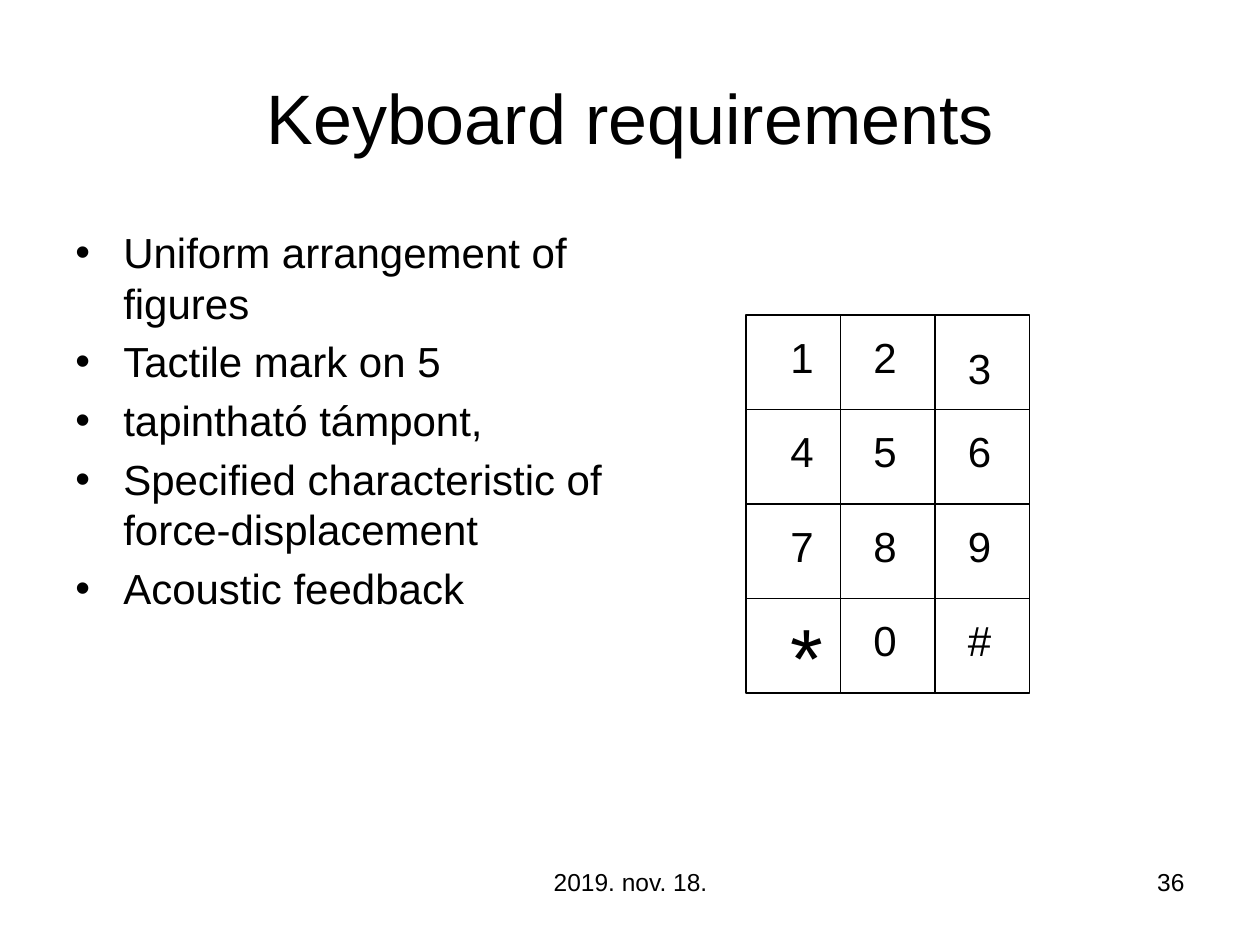
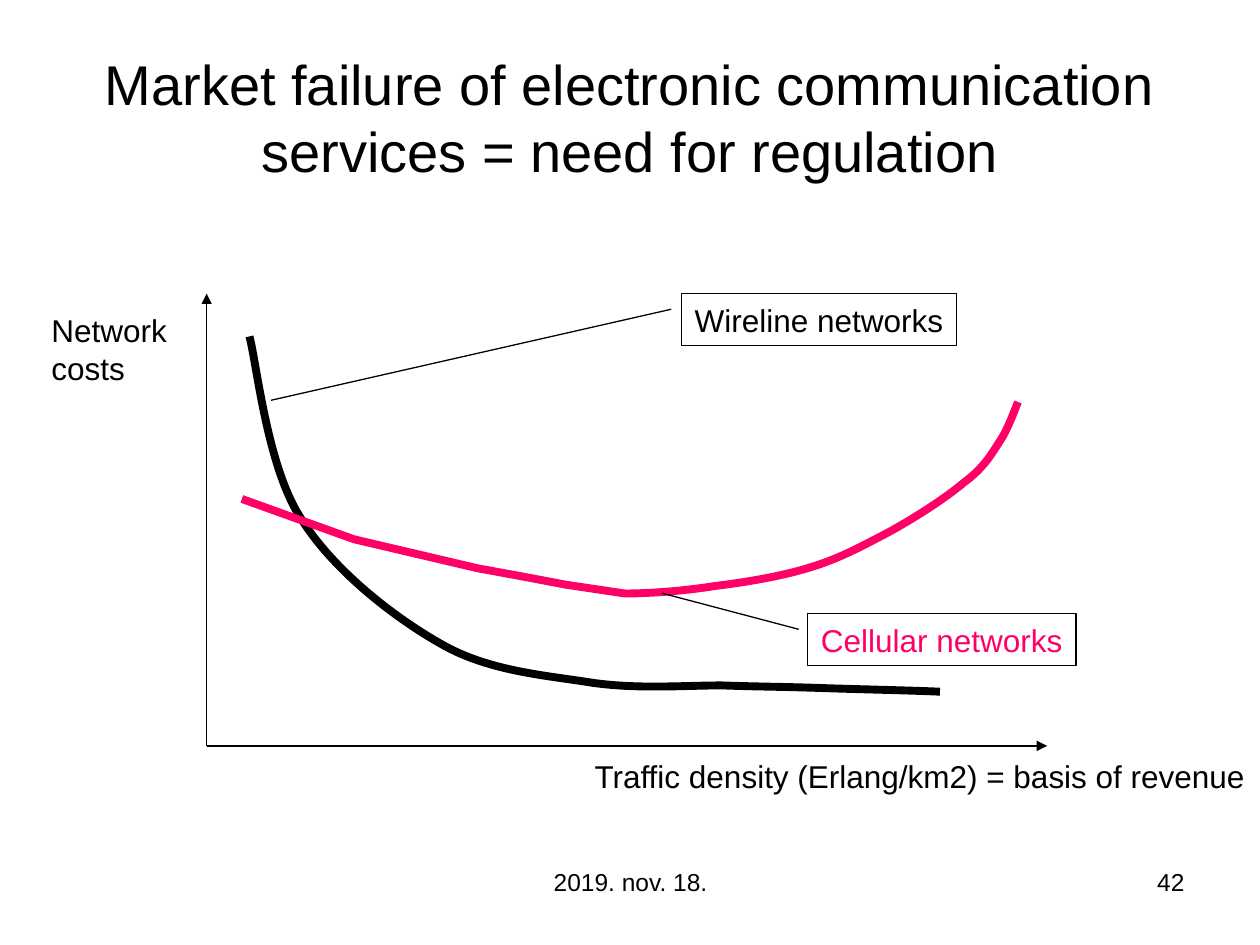
"""Build two slides: keyboard requirements and network cost curves."""
from lxml.etree import SubElement
from pptx import Presentation
from pptx.dml.color import RGBColor
from pptx.enum.shapes import MSO_CONNECTOR, MSO_SHAPE
from pptx.enum.text import MSO_ANCHOR, MSO_AUTO_SIZE, PP_ALIGN
from pptx.oxml.ns import qn
from pptx.util import Inches, Pt

COLORS = {"ink": "000000", "cellular": "FF0066"}
FONT = "Arial"


def write(box, text, size, align=PP_ALIGN.LEFT, anchor=MSO_ANCHOR.TOP, color="ink", wrap=True):
    frame = box.text_frame
    frame.text = text
    frame.word_wrap = wrap
    frame.auto_size = MSO_AUTO_SIZE.NONE if wrap else MSO_AUTO_SIZE.SHAPE_TO_FIT_TEXT
    frame.vertical_anchor = anchor
    for para in frame.paragraphs:
        para.alignment = align
        para.font.name = FONT
        para.font.size = Pt(size)
        para.font.color.rgb = RGBColor.from_string(COLORS[color])
    return frame.paragraphs


def outline(shape, width, color="ink"):
    shape.shadow.inherit = False
    shape.fill.background()
    shape.line.color.rgb = RGBColor.from_string(COLORS[color])
    shape.line.width = Pt(width)


deck = Presentation()
deck.slide_width, deck.slide_height = Inches(10), Inches(7.5)

pages = []
for title, title_size, number in (
    ("Keyboard requirements", 40, "36"),
    ("Market failure of electronic communication services = need for regulation", 32, "42"),
):
    page = deck.slides.add_slide(deck.slide_layouts[6])
    pages.append(page)
    for area, text, size, align, anchor in (
        ((3.42, 6.83, 3.17, 0.52), "2019. nov. 18.", 14, PP_ALIGN.CENTER, MSO_ANCHOR.TOP),
        ((7.17, 6.83, 2.33, 0.52), number, 14, PP_ALIGN.RIGHT, MSO_ANCHOR.TOP),
        ((0.5, 0.3, 9, 1.25), title, title_size, PP_ALIGN.CENTER, MSO_ANCHOR.MIDDLE),
    ):
        write(page.shapes.add_textbox(*map(Inches, area)), text, size, align, anchor)
keyboard_page, cost_page = pages

requirements = [
    "Uniform arrangement of figures",
    "Tactile mark on 5",
    "tapintható támpont,",
    "Specified characteristic of force-displacement",
    "Acoustic feedback",
]
box = keyboard_page.shapes.add_textbox(*map(Inches, (0.5, 1.75, 4.81, 4.95)))
for para in write(box, "\n".join(requirements), 24):
    para.space_before = Pt(4.8)
    properties = para._p.get_or_add_pPr()
    properties.set("marL", str(Inches(0.38)))
    properties.set("indent", str(-Inches(0.38)))
    for tag, attributes in (("a:buFont", {"typeface": FONT}), ("a:buChar", {"char": "•"})):
        bullet = properties.makeelement(qn(tag), attributes)
        properties.insert_element_before(bullet, "a:tabLst", "a:defRPr", "a:extLst")

KEY = 0.75
label_lefts = (6.17, 6.83, 7.58)
for row, symbols in enumerate(("123", "456", "789", "*0#")):
    for column, symbol in enumerate(symbols):
        area = (5.92 + column * KEY, 2.5 + row * KEY, KEY, KEY)
        key = keyboard_page.shapes.add_shape(MSO_SHAPE.RECTANGLE, *map(Inches, area))
        outline(key, 0.75)
        top, width, height, size = 2.58 + row * KEY, 0.39, 0.5, 24
        if symbol == "3":
            top = 2.67
        elif symbol == "*":
            top, width, height, size = 4.75, 0.46, 0.9, 48
        label = keyboard_page.shapes.add_textbox(*map(Inches, (label_lefts[column], top, width, height)))
        write(label, symbol, size, PP_ALIGN.CENTER, MSO_ANCHOR.MIDDLE, wrap=False)

origin = (1.64, 5.92)
for axis_end in ((8.31, 5.92), (1.64, 2.33)):
    axis = cost_page.shapes.add_connector(MSO_CONNECTOR.STRAIGHT, *map(Inches, origin + axis_end))
    axis.line.color.rgb = RGBColor.from_string(COLORS["ink"])
    axis.line.width = Pt(0.75)
    SubElement(axis.line._get_or_add_ln(), qn("a:tailEnd"), type="triangle")
    SubElement(axis._element.spPr, qn("a:effectLst"))

for area, text, wrap in (
    ((4.62, 5.96, 5.38, 0.4), "Traffic density (Erlang/km2) = basis of revenue", False),
    ((0.31, 2.42, 1.25, 0.7), "Network costs", True),
):
    write(cost_page.shapes.add_textbox(*map(Inches, area)), text, 18, wrap=wrap)

wireline_bends = [
    (2.04, 2.9), (2.12, 3.69), (2.38, 4.1),
    (2.63, 4.51), (3.11, 4.89), (3.5, 5.11),
    (3.88, 5.33), (4.34, 5.36), (4.71, 5.42),
    (5.08, 5.47), (5.43, 5.44), (5.73, 5.44),
    (6.02, 5.45), (6.21, 5.45), (6.5, 5.46),
    (6.79, 5.47), (7.26, 5.48), (7.46, 5.49),
]
cellular_line = [(1.92, 3.96), (2.81, 4.28), (3.79, 4.51), (4.12, 4.57), (4.49, 4.64), (4.96, 4.71)]
cellular_bends = [
    (5.16, 4.71), (5.43, 4.69), (5.68, 4.65),
    (5.93, 4.62), (6.22, 4.57), (6.44, 4.5),
    (6.67, 4.43), (6.85, 4.33), (7.06, 4.22),
    (7.26, 4.11), (7.51, 3.95), (7.65, 3.83),
    (7.8, 3.72), (7.86, 3.62), (7.93, 3.51),
    (8, 3.41), (8.05, 3.26), (8.08, 3.19),
]
for straight, bends, color, text, area, pointer in (
    ([(1.98, 2.67)], wireline_bends, "ink", "Wireline networks",
     (5.41, 2.33, 2.18, 0.41), (0.304, -0.038, 2.067, -1.495)),
    (cellular_line, cellular_bends, "cellular", "Cellular networks",
     (6.41, 4.87, 2.13, 0.41), (0.304, -0.033, -0.397, -0.543)),
):
    start, *rest = [tuple(map(Inches, point)) for point in straight + bends]
    builder = cost_page.shapes.build_freeform(*start)
    builder.add_line_segments(rest, close=False)
    curve = builder.convert_to_shape()
    outline(curve, 4.5, color)
    segments = list(curve._element.iter(qn("a:lnTo")))[len(straight) - 1:]
    track = segments[0].getparent()
    for index, segment in enumerate(segments):
        if index % 3 == 0:
            bezier = SubElement(track, qn("a:cubicBezTo"))
        bezier.append(segment[0])
        track.remove(segment)

    callout = cost_page.shapes.add_shape(MSO_SHAPE.LINE_CALLOUT_1, *map(Inches, area))
    for index, value in enumerate(pointer):
        callout.adjustments[index] = value
    outline(callout, 0.75)
    write(callout, text, 18, PP_ALIGN.CENTER, MSO_ANCHOR.MIDDLE, color, wrap=False)

deck.save("out.pptx")
